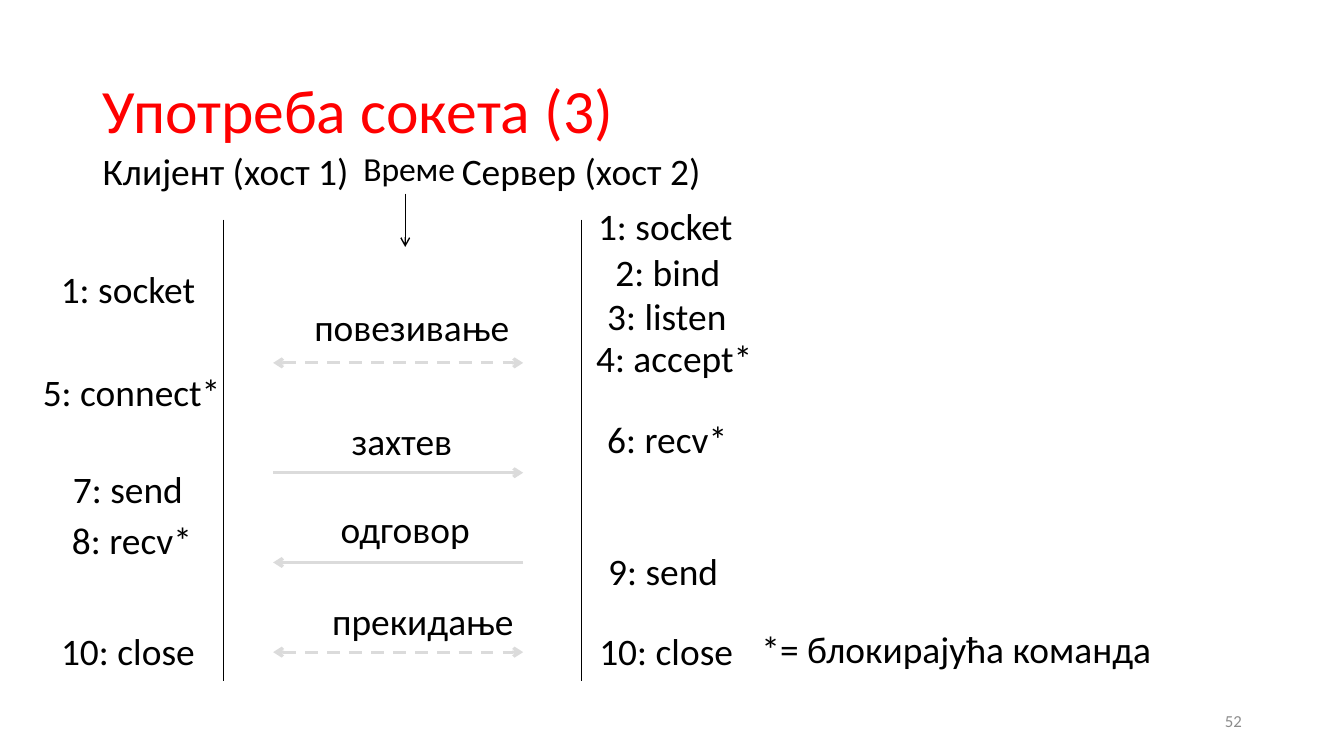
from dataclasses import dataclass

from lxml.etree import SubElement
from pptx import Presentation
from pptx.dml.color import RGBColor
from pptx.enum.dml import MSO_LINE
from pptx.enum.shapes import MSO_CONNECTOR
from pptx.enum.text import MSO_ANCHOR, MSO_AUTO_SIZE, PP_ALIGN
from pptx.oxml.ns import qn
from pptx.util import Inches, Pt

SLIDE_WIDTH = Inches(13.33)
SLIDE_HEIGHT = Inches(7.5)
COLUMNS = 40
ROWS = 30
LABEL_ROWS = 2.2


@dataclass(frozen=True)
class Theme:
    font: str = "Calibri"
    title_color: RGBColor = RGBColor(0xFF, 0x00, 0x00)
    text_color: RGBColor = RGBColor(0x00, 0x00, 0x00)
    message_color: RGBColor = RGBColor(0xDB, 0xDB, 0xDB)
    number_color: RGBColor = RGBColor(0x8C, 0x8C, 0x8C)
    title_size: float = 44
    label_size: float = 26.7
    time_size: float = 24
    number_size: float = 12
    thin_line: float = 1
    message_line: float = 2.25


@dataclass(frozen=True)
class Box:
    left: float
    top: float
    width: float
    height: float

    def x(self, column=0):
        return round((self.left + column) * SLIDE_WIDTH / COLUMNS)

    def y(self, row=0):
        return round((self.top + row) * SLIDE_HEIGHT / ROWS)

    def frame(self):
        return (self.x(), self.y(), self.x(self.width) - self.x(),
                self.y(self.height) - self.y())

    def label_box(self, center, row, width):
        return Box(self.left + center - width / 2, self.top + row, width, LABEL_ROWS)


THEME = Theme()


def add_run(paragraph, text, size, color):
    run = paragraph.add_run()
    run.text = text
    run.font.name = THEME.font
    run.font.size = Pt(size)
    run.font.color.rgb = color


def add_label(shapes, box, text, size=THEME.label_size):
    shape = shapes.add_textbox(*box.frame())
    shape.text_frame.word_wrap = False
    shape.text_frame.auto_size = MSO_AUTO_SIZE.SHAPE_TO_FIT_TEXT
    paragraph = shape.text_frame.paragraphs[0]
    paragraph.alignment = PP_ALIGN.CENTER
    add_run(paragraph, text, size, THEME.text_color)


def add_line(shapes, box, start, end, color=THEME.text_color,
             width=THEME.thin_line, arrows=(), dashed=False):
    connector = shapes.add_connector(
        MSO_CONNECTOR.STRAIGHT, box.x(start[0]), box.y(start[1]),
        box.x(end[0]), box.y(end[1]))
    connector.line.color.rgb = color
    connector.line.width = Pt(width)
    if dashed:
        connector.line.dash_style = MSO_LINE.DASH
    properties = connector.element.spPr
    for arrow in arrows:
        SubElement(properties.find(qn("a:ln")), qn(f"a:{arrow}"), type="arrow")
    SubElement(properties, qn("a:effectLst"))


def add_title(slide, box, text):
    title = slide.shapes.title
    title.left, title.top, title.width, title.height = box.frame()
    title.text_frame.vertical_anchor = MSO_ANCHOR.MIDDLE
    paragraph = title.text_frame.paragraphs[0]
    paragraph.alignment = PP_ALIGN.LEFT
    paragraph.line_spacing = 0.9
    add_run(paragraph, text, THEME.title_size, THEME.title_color)


def add_header(slide, box):
    add_label(slide.shapes, box.label_box(3.99, 0, 7.98), "Клијент (хост 1)")
    add_label(slide.shapes, box.label_box(14.57, 0, 7.77), "Сервер (хост 2)")
    add_label(slide.shapes, box.label_box(9.45, 0, 3.36), "Време", THEME.time_size)
    add_line(slide.shapes, box, (9.33, 2), (9.33, 4.12), arrows=["tailEnd"])


def add_lane(slide, box, line_column, calls):
    add_line(slide.shapes, box, (line_column, 0), (line_column, box.height))
    for text, center, row, width in calls:
        add_label(slide.shapes, box.label_box(center, row, width), text)


def add_messages(slide, box, messages):
    shapes = slide.shapes.add_group_shape().shapes
    for text, center, row, width, line_row, direction in messages:
        both_ways = direction == "both"
        start, end = (0, line_row), (box.width, line_row)
        if direction == "left":
            start, end = end, start
        arrows = ["headEnd", "tailEnd"] if both_ways else ["tailEnd"]
        add_line(shapes, box, start, end, THEME.message_color,
                 THEME.message_line, arrows, both_ways)
        add_label(shapes, box.label_box(center, row, width), text)


def add_page_number(slide, box, number):
    shape = slide.shapes.add_textbox(*box.frame())
    shape.text_frame.word_wrap = True
    shape.text_frame.vertical_anchor = MSO_ANCHOR.MIDDLE
    paragraph = shape.text_frame.paragraphs[0]
    paragraph.alignment = PP_ALIGN.RIGHT
    add_run(paragraph, number, THEME.number_size, THEME.number_color)


CLIENT_CALLS = [
    ("1: socket", 2.85, 1.64, 4.62),
    ("5: connect*", 2.96, 5.72, 5.91),
    ("7: send", 2.85, 9.56, 3.9),
    ("8: recv*", 2.97, 11.6, 4.2),
    ("10: close", 2.85, 16, 4.62),
]
SERVER_CALLS = [
    ("1: socket", 2.37, -0.84, 4.62),
    ("2: bind", 2.45, 0.96, 3.75),
    ("3: listen", 2.42, 2.72, 4.17),
    ("4: accept*", 2.64, 4.4, 5.28),
    ("6: recv*", 2.43, 7.6, 4.2),
    ("9: send", 2.31, 12.84, 3.9),
    ("10: close", 2.4, 16, 4.62),
]
MESSAGES = [
    ("повезивање", 4.13, 0, 6.45, 2.52, "both"),
    ("захтев", 3.83, 4.52, 3.63, 6.88, "right"),
    ("одговор", 3.93, 8, 4.5, 10.44, "left"),
    ("прекидање", 4.46, 11.64, 6.03, 14, "both"),
]


def main():
    presentation = Presentation()
    presentation.slide_width = SLIDE_WIDTH
    presentation.slide_height = SLIDE_HEIGHT
    slide = presentation.slides.add_slide(presentation.slide_layouts[5])
    add_title(slide, Box(2.76, 1.6, 34.5, 5.8), "Употреба сокета (3)")
    add_header(slide, Box(2.73, 5.68, 18.45, 4.12))
    add_lane(slide, Box(0.96, 8.72, 5.91, 18.32), 5.7, CLIENT_CALLS)
    add_lane(slide, Box(17.43, 8.72, 5.28, 18.32), -0.12, SERVER_CALLS)
    add_messages(slide, Box(8.13, 11.88, 7.44, 14), MESSAGES)
    add_label(slide.shapes, Box(22.32, 24.64, 12.3, LABEL_ROWS),
              "*= блокирајућа команда")
    add_page_number(slide, Box(28.26, 27.8, 9, 1.6), "52")
    presentation.save("out.pptx")


if __name__ == "__main__":
    main()
